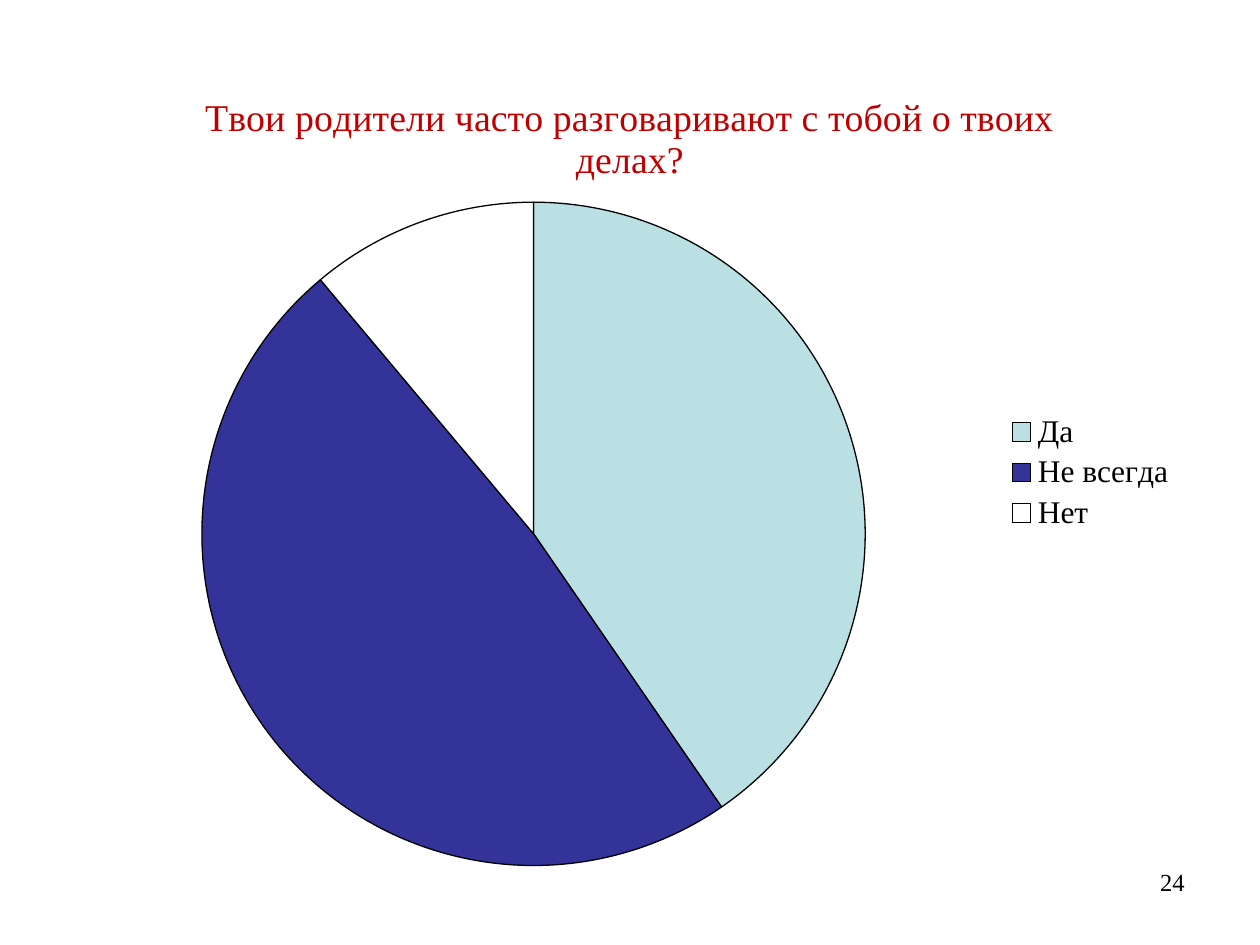
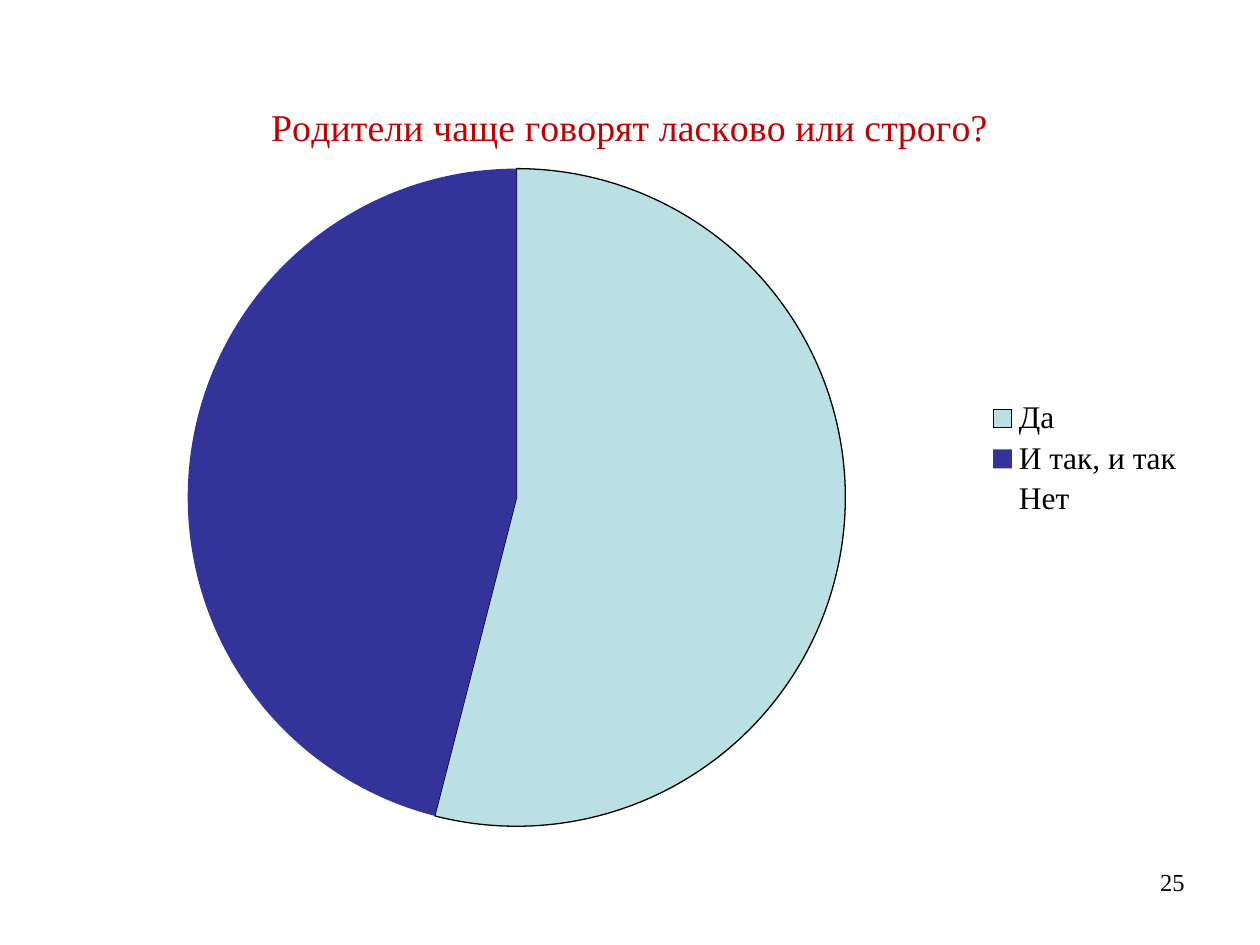
from lxml import etree
from pptx import Presentation
from pptx.chart.data import CategoryChartData
from pptx.dml.color import RGBColor
from pptx.enum import chart as kinds, text
from pptx.oxml import ns
from pptx.util import Pt

RED = RGBColor(0xC0, 0x00, 0x00)
BLACK = RGBColor(0x00, 0x00, 0x00)
AQUA = RGBColor(0xBB, 0xE0, 0xE3)
NAVY = RGBColor(0x33, 0x33, 0x99)
WHITE = RGBColor(0xFF, 0xFF, 0xFF)
SLICES = (AQUA, NAVY, WHITE)
FACE = "Times New Roman"


class Deck:
    """Holds the shared style and the slide being filled."""

    def __init__(self):
        self.prs = Presentation()
        self.prs.slide_width, self.prs.slide_height = Pt(720), Pt(540)
        self.slide = None

    def add(self):
        self.slide = self.prs.slides.add_slide(self.prs.slide_layouts[6])

    def style(self, font, size, color=BLACK):
        font.name, font.size, font.bold = FACE, Pt(size), False
        font.color.rgb = color

    def place(self, chart, area):
        plot = chart._chartSpace.chart.plotArea
        for old in plot.findall(ns.qn("c:layout")):
            plot.remove(old)
        layout = etree.Element(ns.qn("c:layout"))
        plot.insert(0, layout)
        manual = etree.SubElement(layout, ns.qn("c:manualLayout"))
        pairs = [("layoutTarget", "inner"), ("xMode", "edge"), ("yMode", "edge")]
        for tag, val in pairs + list(zip("xywh", area)):
            etree.SubElement(manual, ns.qn(f"c:{tag}")).set("val", str(val))

    def pie(self, title, cats, vals, top, high, area, lined):
        data = CategoryChartData()
        data.categories = cats
        data.add_series("Series 1", vals)
        frame = self.slide.shapes.add_chart(
            kinds.XL_CHART_TYPE.PIE, Pt(36), Pt(top), Pt(648), Pt(high), data)
        chart = frame.chart
        self.style(chart.font, 18)
        chart.has_title = True
        run = chart.chart_title.text_frame.paragraphs[0].add_run()
        run.text = title
        self.style(run.font, 21.6, RED)
        chart.chart_title.include_in_layout = False
        chart.has_legend = True
        chart.legend.position = kinds.XL_LEGEND_POSITION.RIGHT
        chart.legend.include_in_layout = False
        self.style(chart.legend.font, 18)
        self.place(chart, area)
        points = chart.plots[0].series[0].points
        for i, color in enumerate(SLICES):
            form = points[i].format
            form.fill.solid()
            form.fill.fore_color.rgb = color
            if i < lined:
                form.line.color.rgb = BLACK
                form.line.width = Pt(0.75)
            else:
                form.line.fill.background()

    def number(self, num):
        box = self.slide.shapes.add_textbox(Pt(516), Pt(492), Pt(168), Pt(37.5))
        box.text_frame.word_wrap = True
        para = box.text_frame.paragraphs[0]
        para.alignment = text.PP_ALIGN.RIGHT
        run = para.add_run()
        run.text = str(num)
        self.style(run.font, 14)


def main():
    deck = Deck()
    deck.add()
    deck.pie("Твои родители часто разговаривают с тобой о твоих делах?",
             ("Да", "Не всегда ", "Нет"), (40, 48, 11),
             36, 468, (0.12, 0.17, 0.59, 0.81), lined=3)
    deck.number(24)
    deck.add()
    deck.pie("Родители чаще говорят ласково или строго?",
             ("Да", "И так, и так", "Нет"), (54, 46, 0),
             42, 440.5, (0.11, 0.12, 0.58, 0.86), lined=1)
    deck.number(25)
    deck.prs.save("out.pptx")


if __name__ == "__main__":
    main()
